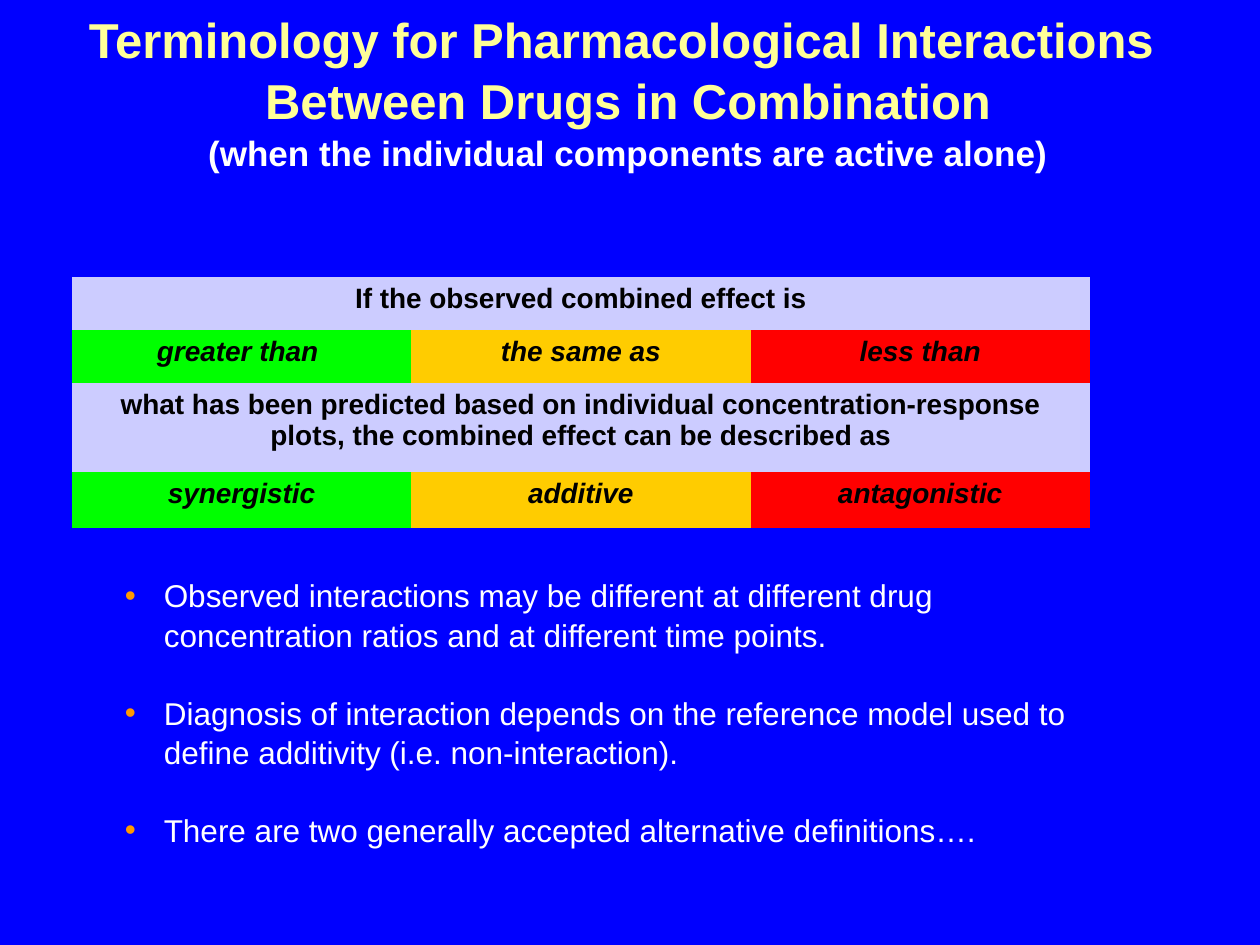
from lxml.etree import SubElement
from pptx import Presentation
from pptx.dml.color import RGBColor
from pptx.enum.text import MSO_ANCHOR, MSO_AUTO_SIZE, PP_ALIGN
from pptx.oxml.ns import qn
from pptx.util import Inches, Pt

BLUE = RGBColor(0x00, 0x00, 0xFF)
PALE_YELLOW = RGBColor(0xFF, 0xFF, 0x99)
WHITE = RGBColor(0xFF, 0xFF, 0xFF)
BLACK = RGBColor(0x00, 0x00, 0x00)
LAVENDER = RGBColor(0xCC, 0xCC, 0xFF)
GREEN = RGBColor(0x00, 0xFF, 0x00)
AMBER = RGBColor(0xFF, 0xCC, 0x00)
RED = RGBColor(0xFF, 0x00, 0x00)
ORANGE = RGBColor(0xFF, 0x99, 0x00)

FONT = "Arial"
LINE_SPACING = 1.05
PLAIN_TABLE = "{2D5ABB26-0587-4C30-8999-92F81FD0307C}"

HEADING = "Terminology for Pharmacological Interactions \vBetween Drugs in Combination\v"
CONDITION = "(when the individual components are active alone)"
OUTCOME_COLORS = [GREEN, AMBER, RED]
OUTCOME_ROWS = [
    (0.42, ["If the observed combined effect is"]),
    (0.42, ["greater than ", "the same as", "less than"]),
    (0.71, ["what has been predicted based on individual concentration-response "
            "plots, the combined effect can be described as"]),
    (0.44, ["synergistic", "additive", "antagonistic"]),
]
REMARKS = [
    "Observed interactions may be different at different drug concentration "
    "ratios and at different time points.",
    "Diagnosis of interaction depends on the reference model used to define "
    "additivity (i.e. non-interaction).",
    "There are two generally accepted alternative definitions….",
]


def style_run(run, size, color, bold=False, italic=False):
    run.font.name = FONT
    run.font.size = Pt(size)
    run.font.bold = bold
    run.font.italic = italic
    run.font.color.rgb = color


def place(placeholder, box, anchor):
    left, top, width, height = map(Inches, box)
    placeholder.left, placeholder.top = left, top
    placeholder.width, placeholder.height = width, height
    frame = placeholder.text_frame
    frame.word_wrap = True
    frame.auto_size = MSO_AUTO_SIZE.NONE
    frame.vertical_anchor = anchor
    return frame


def fill_title(heading, box):
    frame = place(heading, box, MSO_ANCHOR.MIDDLE)
    frame.text = HEADING + CONDITION
    paragraph = frame.paragraphs[0]
    paragraph.alignment = PP_ALIGN.CENTER
    paragraph.line_spacing = LINE_SPACING
    *heading_lines, condition = paragraph.runs
    for line in heading_lines:
        style_run(line, 28, PALE_YELLOW, bold=True)
    style_run(condition, 20, WHITE, bold=True)


def add_outcome_table(slide, box):
    columns = len(OUTCOME_COLORS)
    outcomes = slide.shapes.add_table(len(OUTCOME_ROWS), columns, *map(Inches, box)).table
    outcomes._tbl.tblPr.find(qn("a:tableStyleId")).text = PLAIN_TABLE
    for row, (height, wording) in enumerate(OUTCOME_ROWS):
        outcomes.rows[row].height = Inches(height)
        spans_row = len(wording) == 1
        if spans_row:
            outcomes.cell(row, 0).merge(outcomes.cell(row, columns - 1))
        fills = [LAVENDER] if spans_row else OUTCOME_COLORS
        for column, (words, color) in enumerate(zip(wording, fills)):
            cell = outcomes.cell(row, column)
            cell.fill.solid()
            cell.fill.fore_color.rgb = color
            paragraph = cell.text_frame.paragraphs[0]
            paragraph.text = words
            paragraph.alignment = PP_ALIGN.CENTER
            style_run(paragraph.runs[0], 16, BLACK, bold=True, italic=not spans_row)


def set_bullet(paragraph, indent):
    properties = paragraph._p.get_or_add_pPr()
    properties.set("marL", str(indent))
    properties.set("indent", str(-indent))
    bullet_color = SubElement(properties, qn("a:buClr"))
    SubElement(bullet_color, qn("a:srgbClr"), val=str(ORANGE))
    SubElement(properties, qn("a:buFont"), typeface=FONT)
    SubElement(properties, qn("a:buChar"), char="•")


def fill_remarks(remarks, box):
    frame = place(remarks, box, MSO_ANCHOR.TOP)
    frame.text = "\n".join(REMARKS)
    for number, paragraph in enumerate(frame.paragraphs):
        paragraph.alignment = PP_ALIGN.LEFT
        paragraph.line_spacing = LINE_SPACING
        paragraph.space_before = Pt(21.7 if number else 0)
        paragraph.space_after = Pt(0)
        set_bullet(paragraph, Inches(0.31))
        style_run(paragraph.runs[0], 18, WHITE)


def main():
    presentation = Presentation()
    presentation.slide_width = Inches(10)
    presentation.slide_height = Inches(7.5)
    slide = presentation.slides.add_slide(presentation.slide_layouts[1])
    slide.background.fill.solid()
    slide.background.fill.fore_color.rgb = BLUE
    heading, remarks = slide.placeholders
    fill_title(heading, (0.18, 0.1, 9.61, 1.23))
    add_outcome_table(slide, (0.57, 2.2, 8.08, 1.99))
    fill_remarks(remarks, (0.89, 4.51, 8.15, 2.22))
    presentation.save("out.pptx")


if __name__ == "__main__":
    main()
